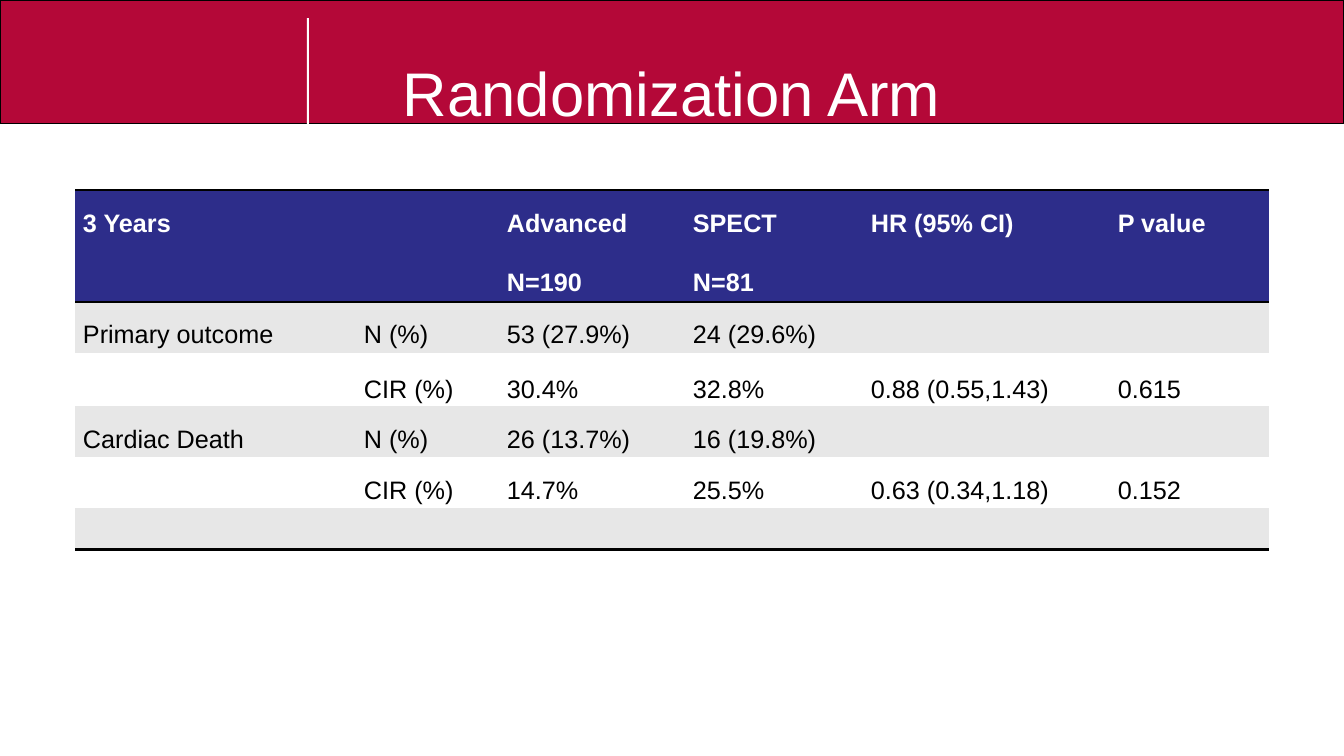
"""Build the Randomization Arm slide: a title band above two outcome tables."""
from dataclasses import dataclass
from lxml import etree
from pptx import Presentation
from pptx.dml.color import RGBColor
from pptx.enum.shapes import MSO_SHAPE
from pptx.oxml.ns import qn
from pptx.util import Pt

RECTANGLE = MSO_SHAPE.RECTANGLE
PX = 914400 / 100.8
NO_STYLE = "{2D5ABB26-0587-4C30-8999-92F81FD0307C}"


@dataclass(frozen=True)
class Theme:
    font: str = "Arial"
    red: str = "B40838"
    navy: str = "2D2D8A"
    grey: str = "E7E7E7"
    white: str = "FFFFFF"
    black: str = "000000"
    title_size: int = 44
    body_size: int = 18
    empty_size: int = 10
    group_gap: int = 22
    rule: float = 2.25


THEME = Theme()
TITLE = "Randomization Arm"
TABLE_LEFT = 75
TEXT_LEFTS = (83, 364, 507, 693, 871, 1118)
HEADER = ("3 Years", "", "Advanced\nN=190", "SPECT\nN=81", "HR (95% CI)", "P value")
TABLES = (
    {
        "top": 190,
        "columns": (244, 149, 195, 181, 222, 203),
        "rows": (
            {"height": 112, "inset": 20, "fill": THEME.navy, "rules": "BT", "cells": HEADER},
            {"height": 51, "inset": 19, "fill": THEME.grey, "rules": "T", "merge": (3, 5),
             "cells": ("Primary outcome", "N (%)", "53 (27.9%)", "24 (29.6%)", "", "")},
        ),
    },
    {
        "top": 376,
        "columns": (229, 176, 181, 182, 239, 187),
        "rows": (
            {"height": 29, "inset": 0,
             "cells": ("", "CIR (%)", "30.4%", "32.8%", "0.88 (0.55,1.43)", "0.615")},
            {"height": 51, "inset": 19, "fill": THEME.grey,
             "cells": ("Cardiac Death", "N (%)", "26 (13.7%)", "16 (19.8%)", "", "")},
            {"height": 51, "inset": 19,
             "cells": ("", "CIR (%)", "14.7%", "25.5%", "0.63 (0.34,1.18)", "0.152")},
            {"height": 41, "inset": 0, "fill": THEME.grey, "rules": "B", "cells": ("",) * 6},
        ),
    },
)


def px(*lengths):
    return [round(length * PX) for length in lengths]


def color(value):
    return RGBColor.from_string(value)


def set_font(para, size, ink, bold=False):
    font = para.font
    font.name, font.size, font.bold = THEME.font, Pt(size), bold
    font.color.rgb = color(ink)


def set_margins(holder, left, top):
    holder.margin_left, holder.margin_top = px(left, top)
    holder.margin_right = holder.margin_bottom = 0


def add_block(page, bounds, fill, line=None):
    block = page.shapes.add_shape(RECTANGLE, *px(*bounds))
    block.shadow.inherit = False
    block.fill.solid()
    block.fill.fore_color.rgb = color(fill)
    if line:
        block.line.color.rgb = color(line)
        block.line.width = Pt(0.75)
    else:
        block.line.fill.background()


def add_rule(cell, side):
    properties = cell._tc.get_or_add_tcPr()
    rule = etree.Element(qn(f"a:ln{side}"), w=str(Pt(THEME.rule)))
    paint = etree.SubElement(rule, qn("a:solidFill"))
    etree.SubElement(paint, qn("a:srgbClr"), val=THEME.black)
    properties.insert(0, rule)


def fill_cell(cell, text, row, indent):
    set_margins(cell, indent, row["inset"] if text else 0)
    fill = row.get("fill")
    if fill:
        cell.fill.solid()
        cell.fill.fore_color.rgb = color(fill)
    else:
        cell.fill.background()
    for side in row.get("rules", ""):
        add_rule(cell, side)
    header = fill == THEME.navy
    cell.text_frame.text = text
    for index, para in enumerate(cell.text_frame.paragraphs):
        size = THEME.body_size if text else THEME.empty_size
        set_font(para, size, THEME.white if header else THEME.black, header)
        if index:
            para.space_before = Pt(THEME.group_gap)


def add_outcomes(page, top, columns, rows):
    height = sum(row["height"] for row in rows)
    bounds = px(TABLE_LEFT, top, sum(columns), height)
    table = page.shapes.add_table(len(rows), len(columns), *bounds).table
    table.first_row = table.horz_banding = False
    table._tbl.tblPr.find(qn("a:tableStyleId")).text = NO_STYLE
    for index, width in enumerate(px(*columns)):
        table.columns[index].width = width
    for row_index, row in enumerate(rows):
        table.rows[row_index].height = px(row["height"])[0]
        for index, text in enumerate(row["cells"]):
            indent = TEXT_LEFTS[index] - TABLE_LEFT - sum(columns[:index])
            fill_cell(table.cell(row_index, index), text, row, indent)
        if "merge" in row:
            first, last = row["merge"]
            table.cell(row_index, first).merge(table.cell(row_index, last))


def add_title(page):
    box = page.shapes.add_textbox(*px(340, 0, 948, 124))
    frame = box.text_frame
    frame.word_wrap = True
    set_margins(frame, 63, 55)
    frame.text = TITLE
    set_font(frame.paragraphs[0], THEME.title_size, THEME.white)


def main():
    deck = Presentation()
    deck.slide_width, deck.slide_height = px(1344, 756)
    page = deck.slides.add_slide(deck.slide_layouts[6])
    add_block(page, (0, 0, 1344, 124), THEME.red, THEME.black)
    add_block(page, (307, 18, 2, 106), THEME.white)
    add_title(page)
    for table in TABLES:
        add_outcomes(page, **table)
    deck.save("out.pptx")


if __name__ == "__main__":
    main()
